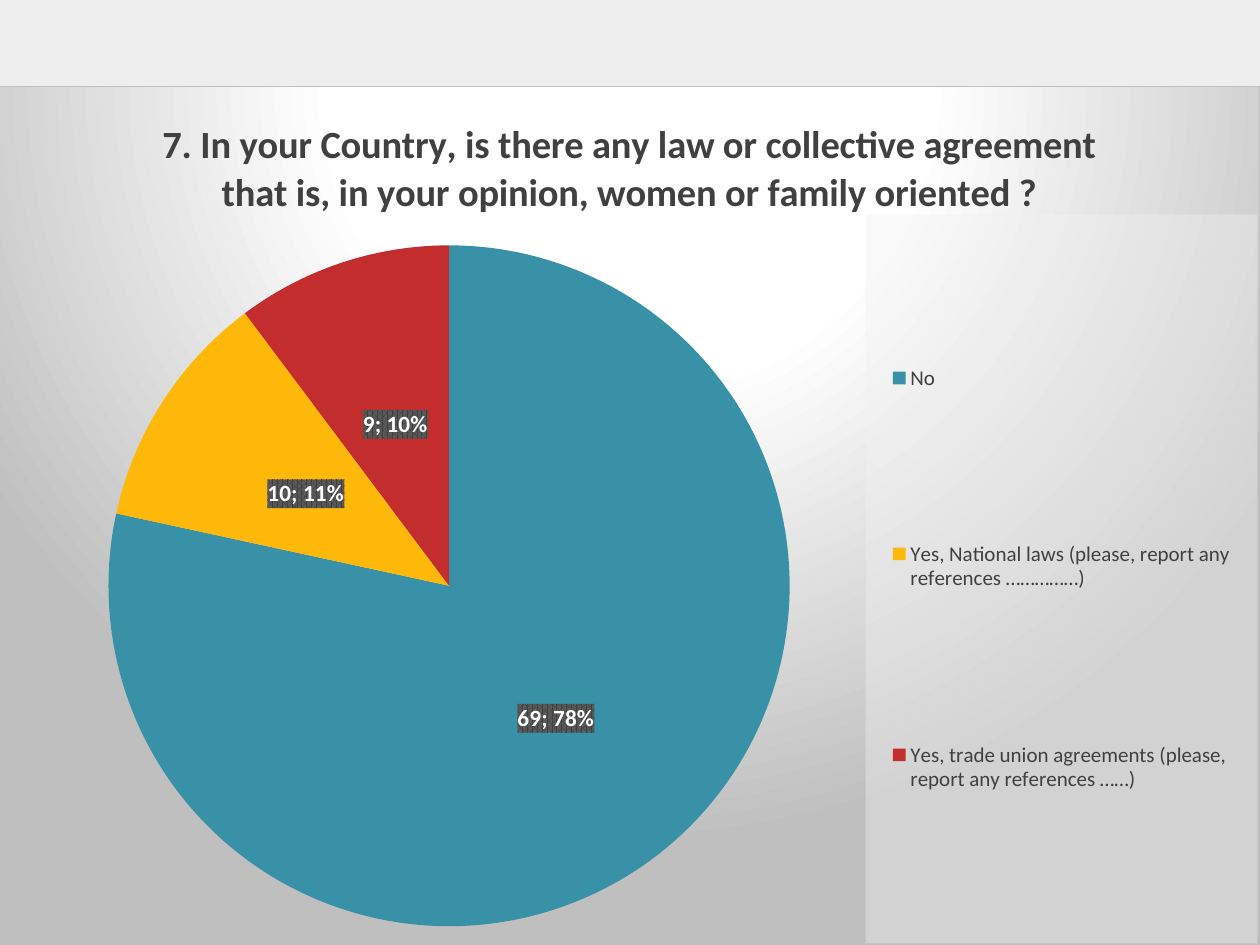
"""Build the survey slide with a pie chart of answers to question 7."""
from pptx import Presentation
from pptx.chart.data import CategoryChartData
from pptx.dml.color import RGBColor
from pptx.enum.chart import XL_CHART_TYPE, XL_LABEL_POSITION, XL_LEGEND_POSITION
from pptx.oxml import parse_xml
from pptx.oxml.ns import nsdecls
from pptx.util import Pt

PIE = XL_CHART_TYPE.PIE
RIGHT = XL_LEGEND_POSITION.RIGHT
CENTER = XL_LABEL_POSITION.CENTER
PX = 914400 // 126
NAMESPACES = nsdecls("a", "c")
FONT = "Calibri"
QUESTION = ("7. In your Country, is there any law or collective agreement "
            "that is, in your opinion, women or family oriented ?")
ANSWERS = [
    ("No", 69, "3891A7"),
    ("Yes, National laws (please, report any references ……………)", 10, "FEB80A"),
    ("Yes, trade union agreements (please, report any references ……)", 9, "C32D2E"),
]
CHART_LEFT, CHART_TOP, CHART_WIDTH, CHART_HEIGHT = -1, 86, 1261, 859


def style_font(font, size, color, bold=False):
    font.name = FONT
    font.size = Pt(size)
    font.bold = bold
    font.color.rgb = RGBColor.from_string(color)


def place(element, index, left, top, width=None, height=None):
    for layout in element.xpath("c:layout"):
        element.remove(layout)
    target = '<c:layoutTarget val="inner"/>' if element.tag.endswith("plotArea") else ""
    values = [("x", (left - CHART_LEFT) / CHART_WIDTH), ("y", (top - CHART_TOP) / CHART_HEIGHT)]
    if width:
        values += [("w", width / CHART_WIDTH), ("h", height / CHART_HEIGHT)]
    modes = "".join(f'<c:{name}Mode val="edge"/>' for name in "xy")
    sizes = "".join(f'<c:{name} val="{value:.4f}"/>' for name, value in values)
    element.insert(index, parse_xml(
        f"<c:layout {NAMESPACES}><c:manualLayout>{target}{modes}{sizes}</c:manualLayout></c:layout>"))


presentation = Presentation()
presentation.slide_width = 1260 * PX
presentation.slide_height = 945 * PX
slide = presentation.slides.add_slide(presentation.slide_layouts[6])
slide.background.fill.solid()
slide.background.fill.fore_color.rgb = RGBColor.from_string("EEEEEE")

chart_data = CategoryChartData()
chart_data.categories = [answer for answer, count, color in ANSWERS]
chart_data.add_series(QUESTION, [count for answer, count, color in ANSWERS])
frame = slide.shapes.add_chart(
    PIE, CHART_LEFT * PX, CHART_TOP * PX, CHART_WIDTH * PX, CHART_HEIGHT * PX, chart_data)
chart = frame.chart
style_font(chart.font, 10, "000000")

chart.has_title = True
title_frame = chart.chart_title.text_frame
title_frame.text = QUESTION
style_font(title_frame.paragraphs[0].runs[0].font, 22, "404040", True)

chart.has_legend = True
chart.legend.position = RIGHT
chart.legend.include_in_layout = False
style_font(chart.legend.font, 12, "404040")

plot = chart.plots[0]
plot.vary_by_categories = True
series = plot.series[0]
for index, (answer, count, color) in enumerate(ANSWERS):
    fill = series.points[index].format.fill
    fill.solid()
    fill.fore_color.rgb = RGBColor.from_string(color)

labels = series.data_labels
labels.show_value = True
labels.show_percentage = True
labels.position = CENTER
style_font(labels.font, 13.3, "FFFFFF", True)

chart_space = chart.element
title = chart_space.xpath("c:chart/c:title")[0]
plot_area = chart_space.xpath("c:chart/c:plotArea")[0]
legend = chart_space.xpath("c:chart/c:legend")[0]
place(title, 1, 155, 110)
place(plot_area, 0, 108, 245, 682, 682)
place(legend, 1, 866, 214, 392, 730)

stops = "".join(f'<a:gs pos="{position}000"><a:srgbClr val="{color}"/></a:gs>'
                for position, color in [(0, "FFFFFF"), (39, "FFFFFF"), (100, "BFBFBF")])
chart_space.xpath("c:chart")[0].addnext(parse_xml(
    f"<c:spPr {NAMESPACES}><a:gradFill><a:gsLst>{stops}</a:gsLst>"
    '<a:path path="circle"><a:fillToRect l="50000" t="-80000" r="50000" b="180000"/></a:path>'
    '</a:gradFill><a:ln w="9525"><a:solidFill><a:srgbClr val="BFBFBF"/></a:solidFill></a:ln></c:spPr>'))
legend.xpath("c:txPr")[0].addprevious(parse_xml(
    f'<c:spPr {NAMESPACES}><a:solidFill><a:srgbClr val="F2F2F2"><a:alpha val="39000"/></a:srgbClr>'
    "</a:solidFill><a:ln><a:noFill/></a:ln></c:spPr>"))
label_element = chart_space.xpath(".//c:ser/c:dLbls")[0]
label_element.xpath("c:txPr")[0].addprevious(parse_xml(
    f'<c:spPr {NAMESPACES}><a:pattFill prst="pct75"><a:fgClr><a:srgbClr val="404040"/></a:fgClr>'
    '<a:bgClr><a:srgbClr val="595959"/></a:bgClr></a:pattFill><a:ln><a:noFill/></a:ln></c:spPr>'))
label_element.xpath("c:showBubbleSize")[0].addnext(parse_xml(
    f"<c:separator {NAMESPACES}>; </c:separator>"))

presentation.save("out.pptx")
